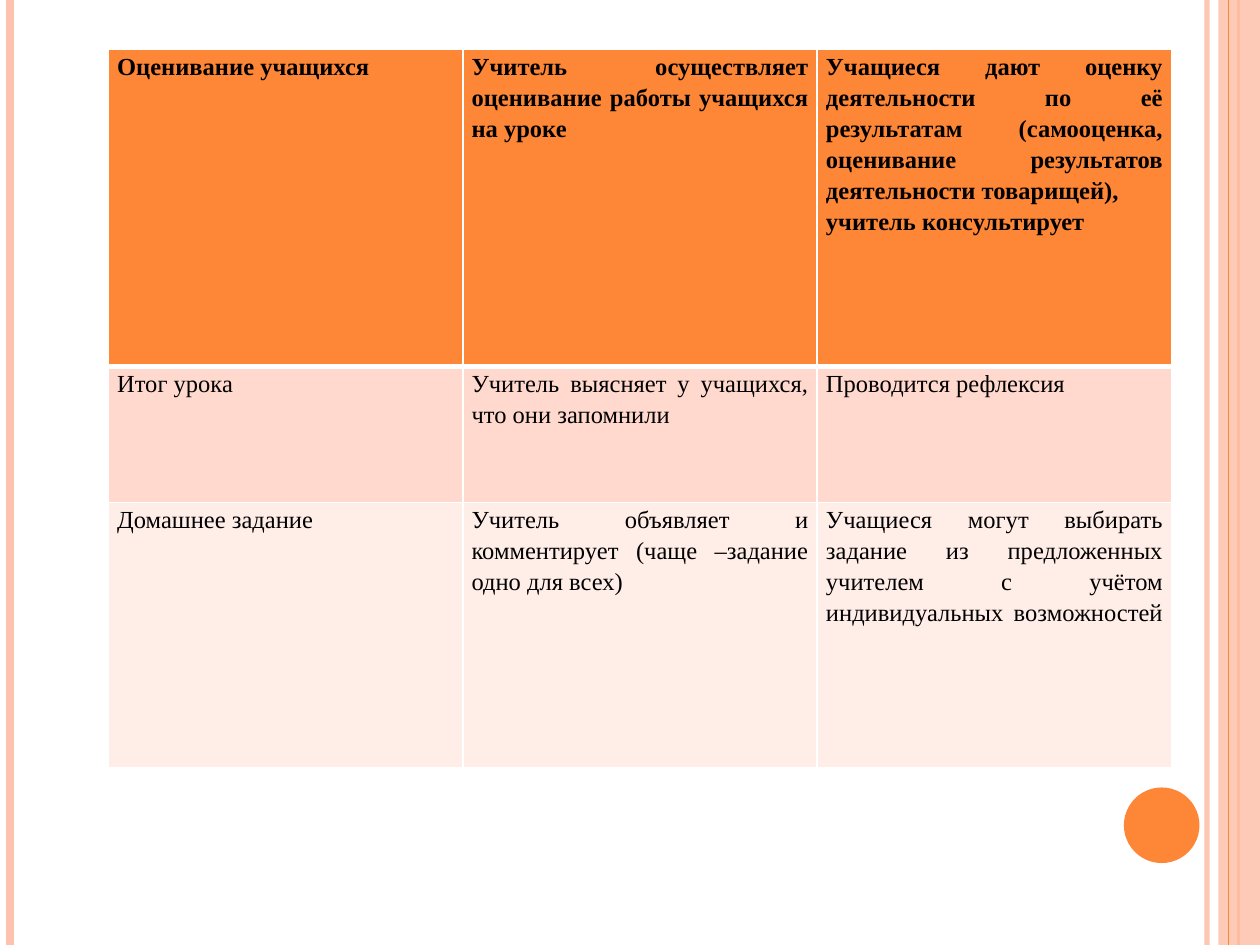
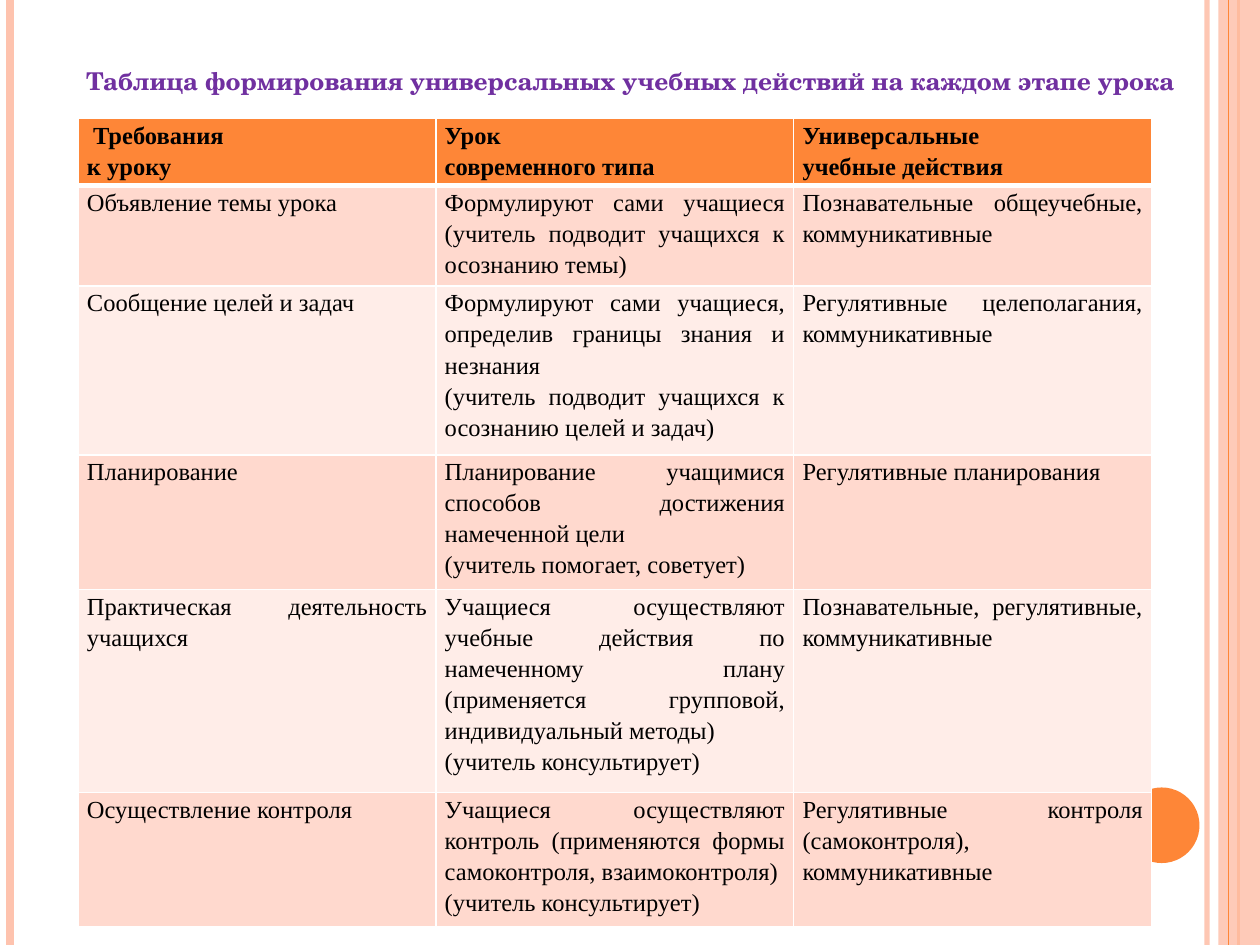
from lxml.etree import SubElement
from pptx import Presentation
from pptx.dml.color import RGBColor
from pptx.enum.shapes import MSO_CONNECTOR as Connector, MSO_SHAPE as Shape
from pptx.enum.text import MSO_ANCHOR as Anchor, MSO_AUTO_SIZE as AutoSize, PP_ALIGN as Align
from pptx.oxml.ns import qn
from pptx.util import Inches, Pt

ORANGE, PEACH, WHITE = "FE8637", "FEC3AE", "FFFFFF"
BLACK, PURPLE = "000000", "7030A0"
BANDS = ("FFD9CE", "FFEDE8")
COLUMNS, ROWS = 100, 75
TITLE_ONLY, BLANK = 5, 6
CELL_MARGINS = {"margin_left": Inches(0.07), "margin_right": Inches(0.07),
                "margin_top": 0, "margin_bottom": 0}
CELL_PARAGRAPH = {"alignment": Align.JUSTIFY, "line_spacing": 1.15}
CELL_FONT = {"name": "Times New Roman", "size": Pt(14)}
TITLE_FRAME = {"vertical_anchor": Anchor.TOP, "word_wrap": True, "auto_size": AutoSize.NONE}
TITLE_FONT = {"name": "TeX Gyre Schola", "size": Pt(14), "bold": True}

ASSESSMENT = [
    ["Оценивание учащихся",
     "Учитель осуществляет оценивание работы учащихся на уроке",
     "Учащиеся дают оценку деятельности по её результатам (самооценка, "
     "оценивание результатов деятельности товарищей),\nучитель консультирует"],
    ["Итог урока",
     "Учитель выясняет у учащихся, что они запомнили",
     "Проводится рефлексия"],
    ["Домашнее задание",
     "Учитель объявляет и комментирует (чаще –задание одно для всех)",
     "Учащиеся могут выбирать задание из предложенных учителем с учётом "
     "индивидуальных возможностей"],
]

LEARNING_ACTIONS = [
    [" Требования\nк уроку", "Урок\nсовременного типа", "Универсальные\nучебные действия"],
    ["Объявление темы урока",
     "Формулируют сами учащиеся (учитель подводит учащихся к осознанию темы)",
     "Познавательные общеучебные, коммуникативные"],
    ["Сообщение целей и задач",
     "Формулируют сами учащиеся, определив границы знания и незнания\n"
     "(учитель подводит учащихся к осознанию целей и задач)",
     "Регулятивные целеполагания, коммуникативные"],
    ["Планирование",
     "Планирование учащимися способов достижения намеченной цели\n"
     "(учитель помогает, советует)",
     "Регулятивные планирования"],
    ["Практическая деятельность учащихся",
     "Учащиеся осуществляют учебные действия по намеченному плану "
     "(применяется групповой, индивидуальный методы)\n(учитель консультирует)",
     "Познавательные, регулятивные, коммуникативные"],
    ["Осуществление контроля",
     "Учащиеся осуществляют контроль (применяются формы самоконтроля, "
     "взаимоконтроля)\n(учитель консультирует)",
     "Регулятивные контроля (самоконтроля), коммуникативные"],
]


def color(code):
    return RGBColor.from_string(code)


def apply(target, values):
    for name, value in values.items():
        setattr(target, name, value)


def set_opacity(fill_parent, percent):
    tint = next(fill_parent.iter(qn("a:srgbClr")))
    SubElement(tint, qn("a:alpha"), val=str(percent * 1000))


class Deck:
    def __init__(self):
        self.show = Presentation()
        self.show.slide_width, self.show.slide_height = Inches(10), Inches(7.5)
        self.slide = None

    def x(self, columns):
        return round(self.show.slide_width * columns / COLUMNS)

    def y(self, rows):
        return round(self.show.slide_height * rows / ROWS)

    def box(self, left, top, width, height):
        return self.x(left), self.y(top), self.x(width), self.y(height)

    def start(self, layout):
        self.slide = self.show.slides.add_slide(self.show.slide_layouts[layout])
        self.stripe(95.8, PEACH, 3, 93)
        self.stripe(0.8, PEACH, 4.5)
        self.stripe(98.3, ORANGE, 1.5)
        self.solid(Shape.RECTANGLE, (96.7, 0, 3.3, ROWS), PEACH, 87)
        self.stripe(97.5, ORANGE, 0.75)
        self.solid(Shape.OVAL, (89.2, 62.5, 6, 6), ORANGE)

    def stripe(self, column, code, width, opacity=100):
        stripe = self.slide.shapes.add_connector(
            Connector.STRAIGHT, self.x(column), 0, self.x(column), self.y(ROWS))
        stripe.line.color.rgb = color(code)
        stripe.line.width = Pt(width)
        properties = stripe._element.spPr
        if opacity < 100:
            set_opacity(properties, opacity)
        SubElement(properties, qn("a:effectLst"))

    def solid(self, kind, place, code, opacity=100):
        solid = self.slide.shapes.add_shape(kind, *self.box(*place))
        solid.shadow.inherit = False
        solid.fill.solid()
        solid.fill.fore_color.rgb = color(code)
        solid.line.fill.background()
        if opacity < 100:
            set_opacity(solid._element.spPr, opacity)

    def title(self, text, place):
        heading = self.slide.shapes.title
        apply(heading, dict(zip(("left", "top", "width", "height"), self.box(*place))))
        apply(heading.text_frame, TITLE_FRAME)
        heading.text_frame.text = text
        paragraph = heading.text_frame.paragraphs[0]
        paragraph.alignment = Align.CENTER
        apply(paragraph.runs[0].font, TITLE_FONT)
        paragraph.runs[0].font.color.rgb = color(PURPLE)

    def table(self, rows, left, top, width, heights):
        place = self.box(left, top, width, sum(heights))
        grid = self.slide.shapes.add_table(len(rows), len(rows[0]), *place).table
        apply(grid, {"first_row": False, "horz_banding": False})
        for column in grid.columns:
            column.width = self.x(width / len(rows[0]))
        for index, (texts, height) in enumerate(zip(rows, heights)):
            grid.rows[index].height = self.y(height)
            for cell, text in zip(grid.rows[index].cells, texts):
                self.cell(cell, text, index)

    def cell(self, cell, text, row):
        apply(cell, CELL_MARGINS)
        self.borders(cell, top=3 if row == 1 else 1, bottom=3 if row == 0 else 1)
        cell.fill.solid()
        cell.fill.fore_color.rgb = color(BANDS[(row - 1) % 2] if row else ORANGE)
        cell.text_frame.text = "\n".join(f"{line} " for line in text.split("\n"))
        for paragraph in cell.text_frame.paragraphs:
            apply(paragraph, CELL_PARAGRAPH)
            font = paragraph.runs[0].font
            apply(font, {**CELL_FONT, "bold": row == 0})
            font.color.rgb = color(BLACK)

    def borders(self, cell, top, bottom):
        properties = cell._tc.get_or_add_tcPr()
        for side, width in {"L": 1, "R": 1, "T": top, "B": bottom}.items():
            edge = SubElement(properties, qn(f"a:ln{side}"), w=str(Pt(width)))
            SubElement(SubElement(edge, qn("a:solidFill")), qn("a:srgbClr"), val=WHITE)


def main():
    deck = Deck()
    deck.start(BLANK)
    deck.table(ASSESSMENT, 8.6, 3.9, 84.4, (25.2, 10.8, 21))
    deck.start(TITLE_ONLY)
    deck.title("Таблица формирования универсальных учебных действий на каждом этапе урока",
               (5.5, 4.7, 89.1, 14.1))
    deck.table(LEARNING_ACTIONS, 6.2, 9.4, 85.2, (5.3, 8, 13.4, 10.7, 16.1, 10.7))
    deck.show.save("out.pptx")


if __name__ == "__main__":
    main()
